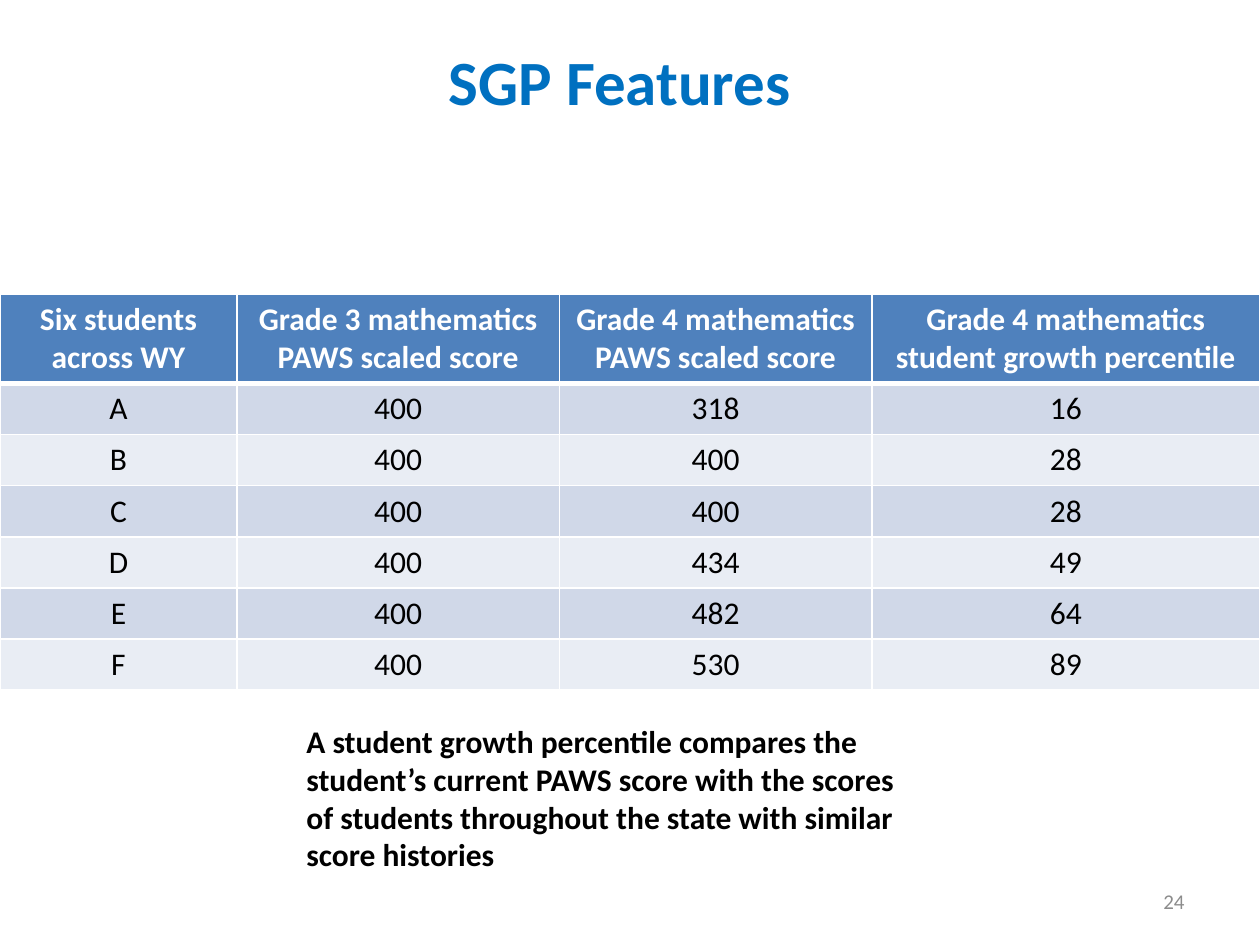
from lxml import etree
from pptx import Presentation
from pptx.dml.color import RGBColor
from pptx.enum.text import MSO_ANCHOR, PP_ALIGN
from pptx.oxml.ns import qn
from pptx.util import Pt

LEFT, MID, RIGHT = PP_ALIGN.LEFT, PP_ALIGN.CENTER, PP_ALIGN.RIGHT
TOP, CENTER = MSO_ANCHOR.TOP, MSO_ANCHOR.MIDDLE
HUES = {
    "white": "FFFFFF", "black": "000000", "title": "0070C0", "page": "8C8C8C",
    "head": "4F81BD", "odd": "D0D8E8", "even": "E9EDF4",
}
WIDTHS = [135.4, 184.3, 178.5, 221.8]
HEAD = [
    "Six students across WY",
    "Grade 3 mathematics PAWS scaled score",
    "Grade 4 mathematics PAWS scaled score",
    "Grade 4 mathematics student growth percentile",
]
SCORES = [
    ("A", 400, 318, 16),
    ("B", 400, 400, 28),
    ("C", 400, 400, 28),
    ("D", 400, 434, 49),
    ("E", 400, 482, 64),
    ("F", 400, 530, 89),
]
NOTE = ("A student growth percentile compares the student’s current PAWS score "
        "with the scores of students throughout the state with similar score histories")


class Page:
    """Hold the text style and the current slide."""

    def __init__(self, slide, face="Calibri"):
        self.slide = slide
        self.face = face

    def label(self, frame, words, hue, size=18, bold=False, align=LEFT):
        para = frame.paragraphs[0]
        para.text = str(words)
        para.alignment = align
        style = {"name": self.face, "size": Pt(size), "bold": bold}
        for key, value in style.items():
            setattr(para.font, key, value)
        para.font.color.rgb = RGBColor.from_string(HUES[hue])

    def text(self, box, words, hue, anchor=TOP, **style):
        frame = self.slide.shapes.add_textbox(*map(Pt, box)).text_frame
        frame.word_wrap = True
        frame.vertical_anchor = anchor
        self.label(frame, words, hue, **style)

    def edge(self, cell, side, width):
        props = cell._tc.get_or_add_tcPr()
        line = etree.SubElement(props, qn(f"a:ln{side}"), w=str(Pt(width)))
        fill = etree.SubElement(line, qn("a:solidFill"))
        etree.SubElement(fill, qn("a:srgbClr"), val=HUES["white"])

    def cell(self, cell, words, row):
        thick = {"T": 3 if row == 1 else 1, "B": 1 if row else 3}
        for side in "LRTB":
            self.edge(cell, side, thick.get(side, 1))
        band = ("odd" if row % 2 else "even") if row else "head"
        cell.fill.solid()
        cell.fill.fore_color.rgb = RGBColor.from_string(HUES[band])
        hue = "black" if row else "white"
        self.label(cell.text_frame, words, hue, bold=not row, align=MID)

    def table(self, left, top, widths, heights, rows):
        box = map(Pt, (left, top, sum(widths), sum(heights)))
        grid = self.slide.shapes.add_table(len(rows), len(widths), *box).table
        for col, width in zip(grid.columns, widths):
            col.width = Pt(width)
        for i, (line, height, row) in enumerate(zip(grid.rows, heights, rows)):
            line.height = Pt(height)
            for cell, words in zip(line.cells, row):
                self.cell(cell, words, i)


def main():
    deck = Presentation()
    deck.slide_width, deck.slide_height = Pt(720), Pt(540)
    page = Page(deck.slides.add_slide(deck.slide_layouts[6]))
    heights = [50.6] + [29.2] * len(SCORES)
    page.table(0, 168, WIDTHS, heights, [HEAD, *SCORES])
    page.text((168, 409, 360, 94), NOTE, "black", bold=True)
    page.text((0, 21, 708, 51), "SGP Features", "title", size=36, bold=True, align=MID)
    page.text((516, 500.5, 168, 28.8), "24", "page", CENTER, size=12, align=RIGHT)
    deck.save("out.pptx")


if __name__ == "__main__":
    main()
